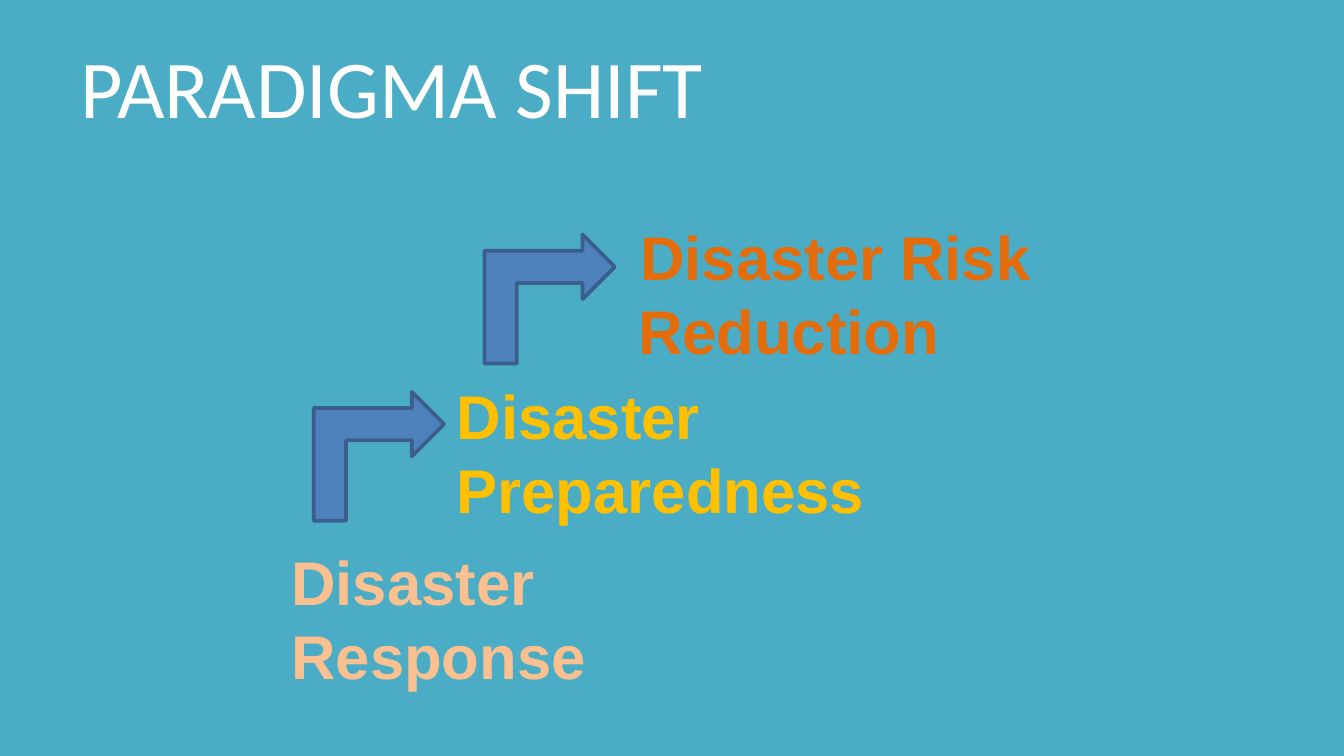
from dataclasses import dataclass

from pptx import Presentation
from pptx.dml.color import RGBColor
from pptx.enum.shapes import MSO_SHAPE
from pptx.enum.text import MSO_ANCHOR, MSO_AUTO_SIZE, PP_ALIGN
from pptx.slide import Slide
from pptx.text.text import TextFrame
from pptx.util import Inches, Pt

SLIDE_WIDTH = 10
SLIDE_HEIGHT = SLIDE_WIDTH * 9 / 16

COLORS = {
    "background": "4BACC6",
    "title": "FFFFFF",
    "reduction": "E46C0A",
    "preparedness": "FFC000",
    "response": "FAC090",
    "arrow": "4F81BD",
    "arrow_edge": "3A5F8C",
}


@dataclass
class Stage:
    lines: list[str]
    left: float
    top: float
    width: float
    color: str
    wrap: bool = False
    first_align: PP_ALIGN = PP_ALIGN.LEFT


@dataclass
class StepArrow:
    left: float
    top: float


STAGES = [
    Stage(["Disaster Risk ", "Reduction"], 4.65, 1.58, 3.26, "reduction",
          first_align=PP_ALIGN.CENTER),
    Stage(["Disaster", "Preparedness"], 3.3, 2.76, 3.92, "preparedness", wrap=True),
    Stage(["Disaster", "Response"], 2.07, 4, 2.41, "response"),
]
STEP_ARROWS = [StepArrow(2.34, 2.91), StepArrow(3.61, 1.74)]


def rgb(name: str) -> RGBColor:
    return RGBColor.from_string(COLORS[name])


def write_text(frame: TextFrame, lines: list[str], *, size: float, font: str,
               color: str, bold: bool = False,
               first_align: PP_ALIGN = PP_ALIGN.LEFT) -> None:
    for index, line in enumerate(lines):
        paragraph = frame.add_paragraph() if index else frame.paragraphs[0]
        paragraph.alignment = PP_ALIGN.LEFT if index else first_align
        run = paragraph.add_run()
        run.text = line
        run.font.size = Pt(size)
        run.font.name = font
        run.font.bold = bold
        run.font.color.rgb = rgb(color)


def draw_stage(slide: Slide, stage: Stage) -> None:
    label = slide.shapes.add_textbox(Inches(stage.left), Inches(stage.top),
                                     Inches(stage.width), Inches(1.21))
    frame = label.text_frame
    frame.word_wrap = stage.wrap
    frame.auto_size = MSO_AUTO_SIZE.SHAPE_TO_FIT_TEXT
    write_text(frame, stage.lines, size=33, font="Arial", color=stage.color,
               bold=True, first_align=stage.first_align)


def draw_step_arrow(slide: Slide, step: StepArrow) -> None:
    arrow = slide.shapes.add_shape(MSO_SHAPE.BENT_UP_ARROW, Inches(step.left),
                                   Inches(step.top), Inches(0.96), Inches(0.97))
    arrow.rotation = 90
    arrow._element.spPr.xfrm.set("flipH", "1")
    arrow.shadow.inherit = False
    arrow.fill.solid()
    arrow.fill.fore_color.rgb = rgb("arrow")
    arrow.line.color.rgb = rgb("arrow_edge")
    arrow.line.width = Pt(2)


def main() -> None:
    presentation = Presentation()
    presentation.slide_width = Inches(SLIDE_WIDTH)
    presentation.slide_height = Inches(SLIDE_HEIGHT)
    slide = presentation.slides.add_slide(presentation.slide_layouts[5])
    slide.background.fill.solid()
    slide.background.fill.fore_color.rgb = rgb("background")

    # Title
    title = slide.shapes.title
    title.left, title.top = Inches(0.5), Inches(0.22)
    title.width, title.height = Inches(9), Inches(0.94)
    title.text_frame.vertical_anchor = MSO_ANCHOR.TOP
    write_text(title.text_frame, ["PARADIGMA SHIFT"], size=44, font="Calibri",
               color="title")

    # Staircase from response up to risk reduction
    for stage in STAGES:
        draw_stage(slide, stage)
    for step in STEP_ARROWS:
        draw_step_arrow(slide, step)

    presentation.save("out.pptx")


if __name__ == "__main__":
    main()
